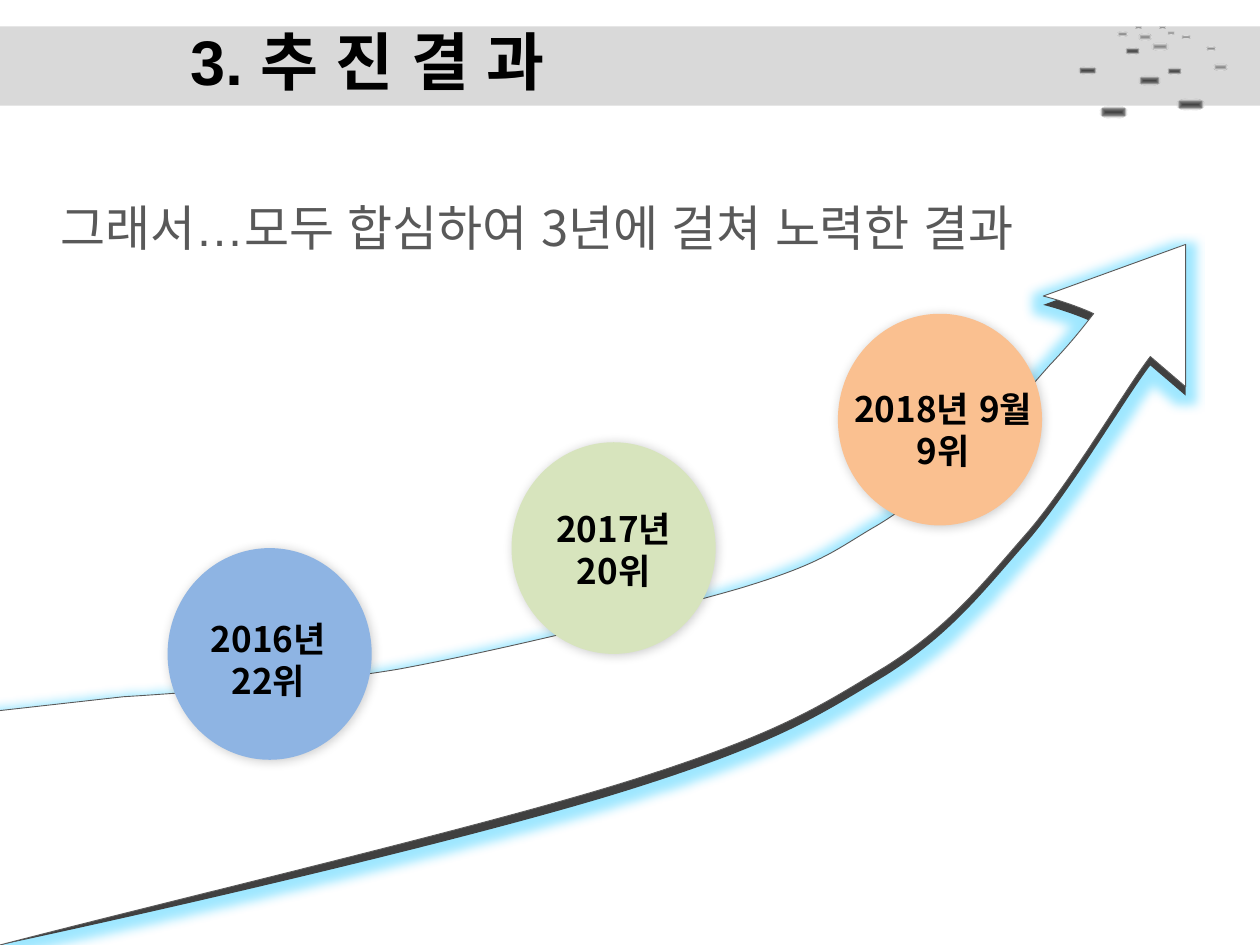
from lxml import etree
from pptx import Presentation
from pptx.dml.color import RGBColor
from pptx.enum.shapes import MSO_SHAPE as SHAPE
from pptx.enum.text import MSO_ANCHOR as ANCHOR, MSO_AUTO_SIZE as AUTOSIZE, PP_ALIGN as ALIGN
from pptx.oxml import parse_xml
from pptx.oxml.ns import qn
from pptx.util import Inches, Pt

NS = 'xmlns:a="http://schemas.openxmlformats.org/drawingml/2006/main"'


def paint(shape, color, effect=None):
    shape.shadow.inherit = False
    shape.fill.solid()
    shape.fill.fore_color.rgb = RGBColor.from_string(color)
    shape.line.fill.background()
    if effect:
        shape.element.spPr.find(qn("a:effectLst")).append(parse_xml(effect))


def format_text(frame, size, color, bold, align, latin="Noto Sans CJK KR"):
    for paragraph in frame.paragraphs:
        paragraph.alignment = align
        for run in paragraph.runs:
            run.font.size = Pt(size)
            run.font.bold = bold
            run.font.name = latin
            run.font.color.rgb = RGBColor.from_string(color)
            east_asian = etree.SubElement(run.font._element, qn("a:ea"))
            east_asian.set("typeface", "Arial")


prs = Presentation()
prs.slide_width, prs.slide_height = Inches(10), Inches(7.5)
slide = prs.slides.add_slide(prs.slide_layouts[5])
shapes = slide.shapes

band = shapes.add_shape(SHAPE.RECTANGLE, 0, Inches(0.21), Inches(10), Inches(0.63))
paint(band, "D9D9D9")

dark_drops = [
    (8.56, 0.53, 0.14, 0.06), (8.73, 0.84, 0.22, 0.1), (9.34, 0.78, 0.22, 0.1),
    (9.04, 0.6, 0.17, 0.08), (8.93, 0.38, 0.11, 0.05), (9.27, 0.54, 0.11, 0.05),
]
light_drops = [
    (9.63, 0.51, 0.11, 0.05), (9.58, 0.37, 0.07, 0.03), (9.38, 0.28, 0.07, 0.03),
    (9.14, 0.34, 0.13, 0.06), (9.04, 0.27, 0.1, 0.05), (8.87, 0.25, 0.08, 0.04),
    (9.01, 0.21, 0.05, 0.02), (9.27, 0.25, 0.05, 0.02), (9.2, 0.21, 0.05, 0.02),
]
for drops, center, middle in [(dark_drops, "404040", "808080"), (light_drops, "808080", "BFBFBF")]:
    for box in drops:
        drop = shapes.add_shape(SHAPE.OVAL, *map(Inches, box))
        paint(drop, center)
        gradient = parse_xml(
            f'<a:gradFill {NS} rotWithShape="1"><a:gsLst>'
            f'<a:gs pos="0"><a:srgbClr val="{center}"/></a:gs>'
            f'<a:gs pos="50000"><a:srgbClr val="{middle}"/></a:gs>'
            '<a:gs pos="100000"><a:srgbClr val="FFFFFF"><a:alpha val="0"/></a:srgbClr></a:gs>'
            '</a:gsLst><a:path path="shape">'
            '<a:fillToRect l="50000" t="50000" r="50000" b="50000"/></a:path></a:gradFill>')
        properties = drop.element.spPr
        properties.replace(properties.find(qn("a:solidFill")), gradient)

title = shapes.title
shapes.element.append(title.element)
title.left, title.top, title.width, title.height = map(Inches, (0.75, 0.21, 8.75, 0.54))
title.text_frame.text = "3. 추 진 결 과"
title.text_frame.auto_size = AUTOSIZE.NONE
title.text_frame.vertical_anchor = ANCHOR.MIDDLE
title.text_frame.margin_left = Inches(0.76)
format_text(title.text_frame, 36, "000000", True, ALIGN.LEFT, "Arial")

summary = shapes.add_textbox(*map(Inches, (0.28, 1.47, 9.36, 0.64))).text_frame
summary.word_wrap = True
summary.margin_left = Inches(0.2)
summary.margin_top = Inches(0.1)
summary.text = "그래서…모두 합심하여 3년에 걸쳐 노력한 결과"
format_text(summary, 28, "595959", False, ALIGN.LEFT)

arrow_segments = [
    [(0, 7.5)],
    [(1.5, 7.11), (3.85, 6.56), (5.02, 6.19)],
    [(6.19, 5.82), (6.5, 5.61), (7.03, 5.29)],
    [(7.55, 4.96), (7.8, 4.63), (8.16, 4.22)],
    [(8.51, 3.81), (8.95, 3.06), (9.13, 2.83)],
    [(9.41, 3.07)],
    [(9.41, 2.64), (9.41, 2.37), (9.41, 1.94)],
    [(8.28, 2.35)],
    [(8.44, 2.39), (8.62, 2.46), (8.68, 2.49)],
    [(8.57, 2.63), (8.5, 2.72), (8.33, 2.9)],
    [(8.16, 3.09), (7.92, 3.38), (7.68, 3.6)],
    [(7.44, 3.82), (7.21, 4.03), (6.91, 4.2)],
    [(6.61, 4.38), (6.5, 4.48), (5.87, 4.67)],
    [(5.25, 4.85), (3.98, 5.16), (3.17, 5.31)],
    [(2.35, 5.45), (0.98, 5.53), (0.98, 5.53)],
    [(0, 5.64)],
]
glow = (f'<a:glow {NS} rad="{Pt(11)}"><a:srgbClr val="5FD8FF">'
        '<a:alpha val="60000"/></a:srgbClr></a:glow>')
for depth, color, effect in [(0.07, "404040", glow), (0, "FFFFFF", None)]:
    corners = [(Inches(x), Inches(min(y + depth, 7.5)))
               for x, y in (segment[-1] for segment in arrow_segments)]
    builder = shapes.build_freeform(*corners[0])
    builder.add_line_segments(corners[1:], close=False)
    arrow = builder.convert_to_shape()
    outline = arrow.element.spPr.find(".//" + qn("a:path"))
    for step, segment in zip(list(outline), arrow_segments):
        if len(segment) == 1:
            continue
        curve = etree.Element(qn("a:cubicBezTo"))
        for x, y in segment:
            point = etree.SubElement(curve, qn("a:pt"))
            point.set("x", str(Inches(x) - arrow.left))
            point.set("y", str(Inches(min(y + depth, 7.5)) - arrow.top))
        outline.replace(step, curve)
    paint(arrow, color, effect)
arrow.line.color.rgb = RGBColor.from_string("595959")
arrow.line.width = Pt(0.5)

circle_shadow = (f'<a:outerShdw {NS} blurRad="{Pt(6)}" dist="{Pt(1)}" dir="2700000">'
                 '<a:srgbClr val="000000"><a:alpha val="20000"/></a:srgbClr></a:outerShdw>')
milestones = [
    ("2016년", "22위", "8EB4E3", (1.33, 4.35), (1.46, 4.85, 1.34)),
    ("2017년", "20위", "D7E4BD", (4.06, 3.51), (4.2, 3.98, 1.34)),
    ("2018년 9월", "9위", "FAC090", (6.65, 2.49), (6.54, 3.03, 1.89)),
]
for period, rank, color, corner, label_box in milestones:
    circle = shapes.add_shape(SHAPE.OVAL, *map(Inches, (*corner, 1.62, 1.68)))
    paint(circle, color, circle_shadow)
    label = shapes.add_textbox(*map(Inches, (*label_box, 0.77))).text_frame
    label.word_wrap = True
    label.text = f"{period}\n{rank}"
    format_text(label, 20, "000000", True, ALIGN.CENTER)

prs.save("out.pptx")
